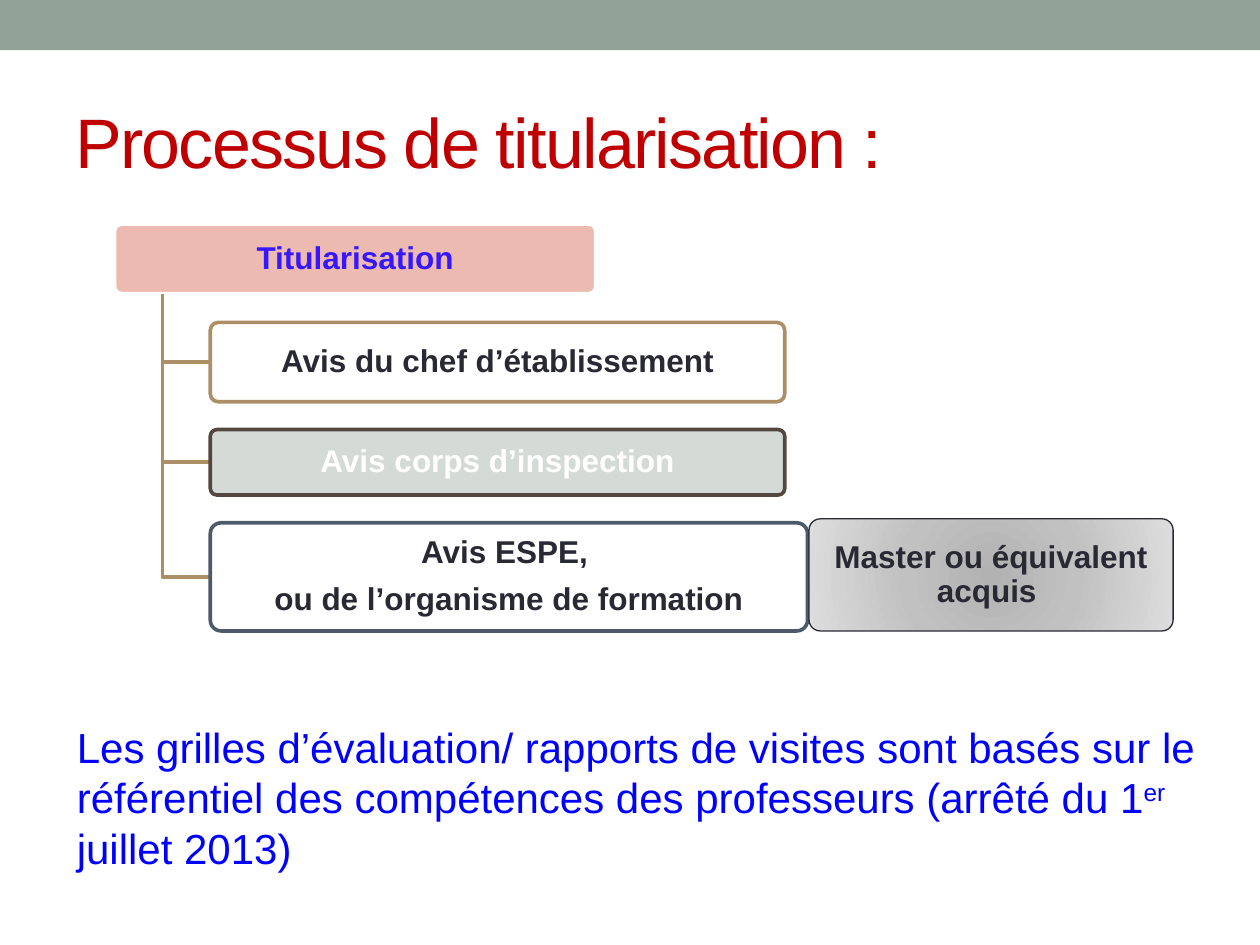
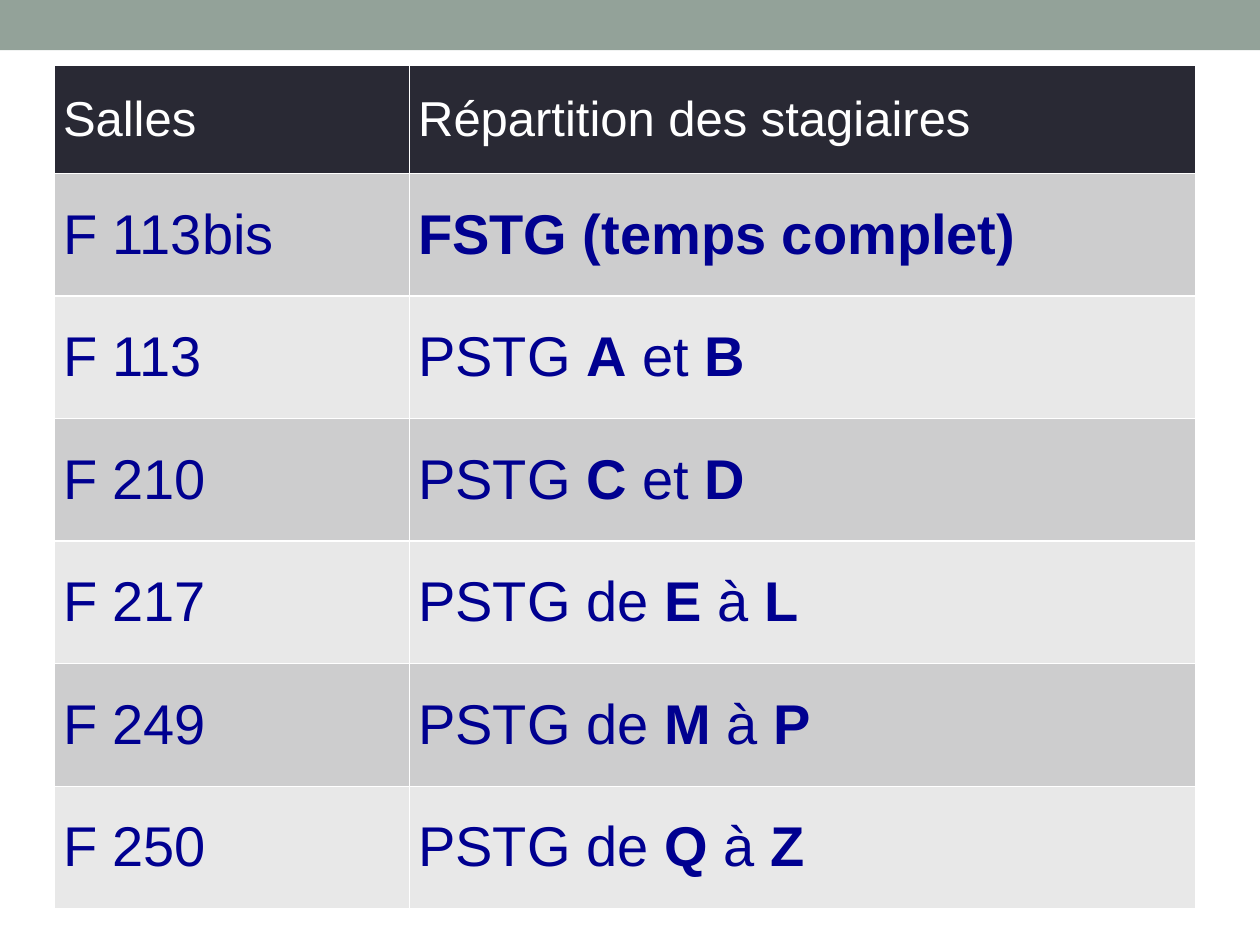
"""Build two slides: the tenure process diagram and the room allocation table."""
from dataclasses import dataclass

from lxml.etree import SubElement
from pptx import Presentation
from pptx.dml.color import RGBColor
from pptx.enum.shapes import MSO_SHAPE as Shape
from pptx.enum.text import MSO_ANCHOR as Anchor, PP_ALIGN as Align
from pptx.oxml import parse_xml
from pptx.oxml.ns import nsdecls, qn
from pptx.util import Cm, Pt


@dataclass(frozen=True)
class Theme:
    font: str = "Arial"
    band: str = "93A299"
    title: str = "C00000"
    note: str = "0000FF"
    dark: str = "292934"
    white: str = "FFFFFF"
    root_fill: str = "EDBAB1"
    root_text: str = "3617FF"
    branch: str = "AD8F67"
    inspection_fill: str = "D4DAD6"
    inspection_line: str = "544740"
    training_line: str = "4C5A6A"
    gradient: tuple = ((0, "B2B2B3"), (45, "C1C1C2"), (100, "DDDDDE"))
    table_text: str = "000090"
    table_rows: tuple = ("CDCDCE", "E8E8E8")
    title_size: int = 40
    box_size: int = 18
    note_size: int = 24
    header_size: int = 28
    cell_size: int = 32
    diagram_line: float = 2.08


theme = Theme()


def write(frame, lines, size, color, align=Align.LEFT, bold=False):
    """Write lines into a text frame; asterisks toggle bold."""
    frame.word_wrap = True
    frame.vertical_anchor = Anchor.MIDDLE
    for number, line in enumerate(lines):
        paragraph = frame.paragraphs[0] if number == 0 else frame.add_paragraph()
        paragraph.alignment = align
        paragraph.font.name = theme.font
        paragraph.font.size = Pt(size)
        paragraph.font.color.rgb = RGBColor.from_string(color)
        paragraph.font.bold = bold
        for position, part in enumerate(line.split("*")):
            if part:
                run = paragraph.add_run()
                run.text = part
                if position % 2:
                    run.font.bold = True


def add_box(slide, area, lines, text_color, fill, line, line_width=theme.diagram_line):
    """Add a rounded box holding centred bold lines."""
    box = slide.shapes.add_shape(Shape.ROUNDED_RECTANGLE, *map(Cm, area))
    box.shadow.inherit = False
    box.adjustments[0] = 0.1
    box.fill.solid()
    box.fill.fore_color.rgb = RGBColor.from_string(fill)
    box.line.color.rgb = RGBColor.from_string(line)
    box.line.width = Pt(line_width)
    frame = box.text_frame
    frame.margin_left = frame.margin_right = Cm(0.1)
    frame.margin_top = frame.margin_bottom = Cm(0.08)
    write(frame, lines, theme.box_size, text_color, Align.CENTER, bold=True)
    for paragraph in frame.paragraphs:
        paragraph.line_spacing = 0.9
        paragraph.space_after = Pt(7)
    return box


presentation = Presentation()
presentation.slide_width, presentation.slide_height = Cm(25.4), Cm(19.05)
blank_layout = presentation.slide_layouts[6]
process_slide, rooms_slide = [presentation.slides.add_slide(blank_layout) for _ in range(2)]

for slide in (process_slide, rooms_slide):
    band = slide.shapes.add_shape(Shape.RECTANGLE, 0, 0, presentation.slide_width, Cm(1.01))
    band.shadow.inherit = False
    band.fill.solid()
    band.fill.fore_color.rgb = RGBColor.from_string(theme.band)
    band.line.fill.background()

title = process_slide.shapes.add_textbox(Cm(1.27), Cm(1.47), Cm(22.86), Cm(2.74))
write(title.text_frame, ["Processus de titularisation :"], theme.title_size, theme.title)
title.text_frame.paragraphs[0].runs[0].font._element.set("spc", "-100")

add_box(process_slide, (2.31, 4.52, 9.7, 1.4), ["Titularisation"],
        theme.root_text, theme.root_fill, theme.white)

trunk_left, trunk_top, opinion_left = 3.28, 5.92, 4.24
opinions = [
    (6.5, 11.58, 1.6, ["Avis du chef d’établissement"],
     theme.dark, theme.white, theme.branch),
    (8.66, 11.58, 1.32, ["Avis corps d’inspection"],
     theme.white, theme.inspection_fill, theme.inspection_line),
    (10.54, 12.04, 2.18, ["Avis ESPE, ", "ou de l’organisme de formation"],
     theme.dark, theme.white, theme.training_line),
]
for top, width, height, lines, text_color, fill, line in opinions:
    middle = top + height / 2
    builder = process_slide.shapes.build_freeform(Cm(trunk_left), Cm(trunk_top))
    builder.add_line_segments(
        [(Cm(trunk_left), Cm(middle)), (Cm(opinion_left), Cm(middle))], close=False)
    branch = builder.convert_to_shape()
    branch.shadow.inherit = False
    branch.fill.background()
    branch.line.color.rgb = RGBColor.from_string(theme.branch)
    branch.line.width = Pt(theme.diagram_line)
    add_box(process_slide, (opinion_left, top, width, height), lines, text_color, fill, line)

master_box = add_box(process_slide, (16.31, 10.46, 7.34, 2.26),
                     ["Master ou équivalent acquis "],
                     theme.dark, theme.white, theme.dark, 0.75)
stops = "".join(f'<a:gs pos="{position * 1000}"><a:srgbClr val="{color}"/></a:gs>'
                for position, color in theme.gradient)
gradient = parse_xml(
    f'<a:gradFill {nsdecls("a")} rotWithShape="1"><a:gsLst>{stops}</a:gsLst>'
    '<a:path path="circle"><a:fillToRect l="100000" t="100000" r="100000" b="100000"/>'
    '</a:path></a:gradFill>')
properties = master_box._element.spPr
properties.replace(properties.find(qn("a:solidFill")), gradient)

note = process_slide.shapes.add_textbox(Cm(1.3), Cm(14.4), Cm(23.7), Cm(3.33))
write(note.text_frame,
      ["Les grilles d’évaluation/ rapports de visites sont basés sur le référentiel "
       "des compétences des professeurs (arrêté du 1"],
      theme.note_size, theme.note)
note_paragraph = note.text_frame.paragraphs[0]
ordinal = note_paragraph.add_run()
ordinal.text = "er"
ordinal.font._element.set("baseline", "30000")
note_paragraph.add_run().text = " juillet 2013)"

rooms = [
    ("Salles", "Répartition des stagiaires"),
    ("F 113bis", "*FSTG (temps complet)*"),
    ("F 113", "PSTG *A* et *B*"),
    ("F 210", "PSTG *C* et *D*"),
    ("F 217", "PSTG de *E *à *L*"),
    ("F 249", "PSTG de *M *à *P*"),
    ("F 250", "PSTG de *Q* à *Z*"),
]
header_height, row_height = 2.18, 2.47
column_widths = (7.16, 15.85)
table_height = header_height + row_height * (len(rooms) - 1)
table = rooms_slide.shapes.add_table(
    len(rooms), len(column_widths), Cm(1.09), Cm(1.32),
    Cm(sum(column_widths)), Cm(table_height)).table
for column, width in zip(table.columns, column_widths):
    column.width = Cm(width)
for row_number, texts in enumerate(rooms):
    is_header = row_number == 0
    table.rows[row_number].height = Cm(header_height if is_header else row_height)
    fill = theme.dark if is_header else theme.table_rows[(row_number - 1) % 2]
    size = theme.header_size if is_header else theme.cell_size
    color = theme.white if is_header else theme.table_text
    for column_number, text in enumerate(texts):
        cell = table.cell(row_number, column_number)
        cell.margin_left = cell.margin_right = Cm(0.18)
        cell.margin_top = cell.margin_bottom = 0
        write(cell.text_frame, [text], size, color)
        cell.vertical_anchor = Anchor.MIDDLE
        cell_properties = cell._tc.get_or_add_tcPr()
        for side in ("a:lnL", "a:lnR", "a:lnT", "a:lnB"):
            border = SubElement(cell_properties, qn(side), w=str(Pt(1)))
            border_fill = SubElement(border, qn("a:solidFill"))
            SubElement(border_fill, qn("a:srgbClr"), val=theme.white)
        cell.fill.solid()
        cell.fill.fore_color.rgb = RGBColor.from_string(fill)

presentation.save("out.pptx")
